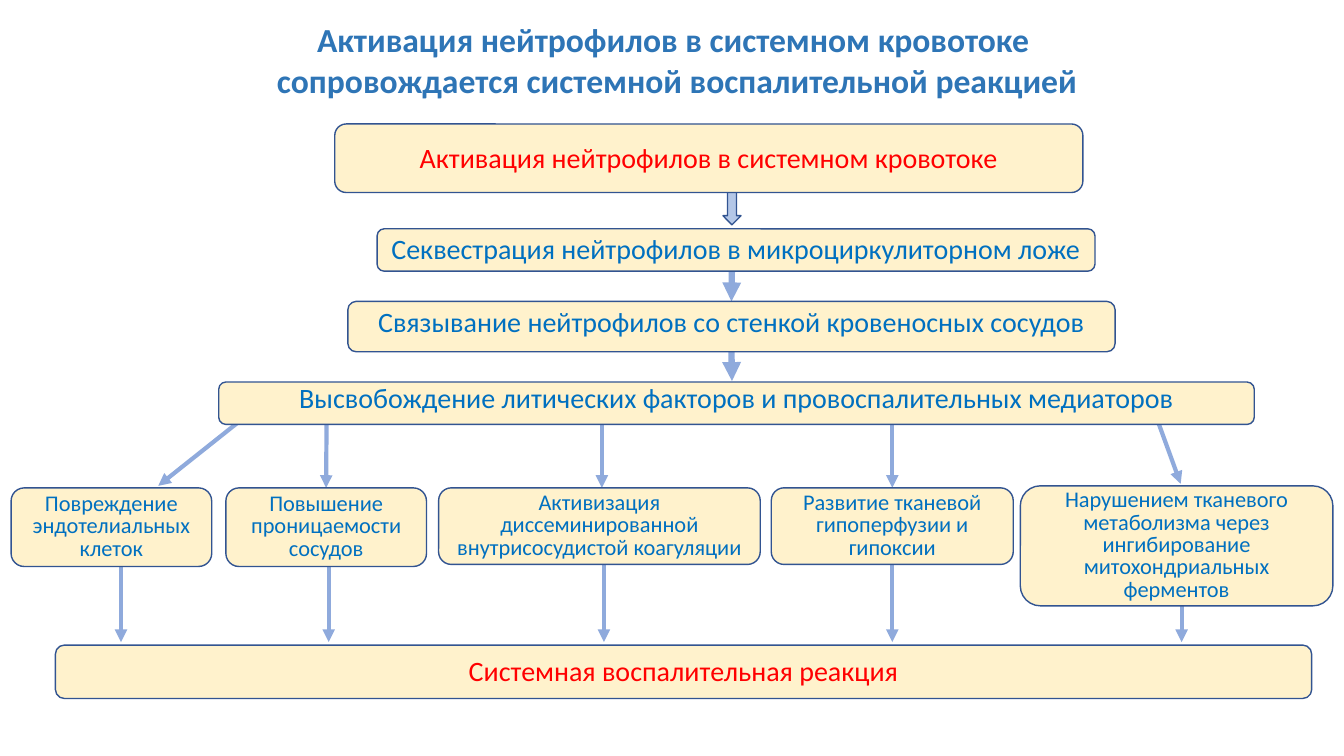
import pptx
import pptx.util
import pptx.dml.color
import pptx.enum.shapes
import pptx.enum.text
import pptx.oxml.ns
import lxml.etree

PX = 9144  # 100 px to the inch
HUES = {
    "title": "2E75B6", "text": "0070C0", "alert": "FF0000",
    "box": "FFF2CC", "edge": "325491", "line": "8FAADC", "block": "B4C7E7",
}
FONT = "Calibri"
KIND = pptx.enum.shapes.MSO_SHAPE


class Board:
    def __init__(self, deck):
        self.slide = deck.slides.add_slide(deck.slide_layouts[6])
        self.shapes = self.slide.shapes

    def hue(self, name):
        return pptx.dml.color.RGBColor.from_string(HUES[name])

    def label(self, frame, text, size, hue, bold=False):
        par = frame.paragraphs[0]
        par.text = text
        par.alignment = pptx.enum.text.PP_ALIGN.CENTER
        par.font.name = FONT
        par.font.size = pptx.util.Pt(size)
        par.font.bold = bold
        par.font.color.rgb = self.hue(hue)
        return par

    def title(self, text, *area):
        frame = self.shapes.add_textbox(*(v * PX for v in area)).text_frame
        frame.word_wrap = False
        frame.auto_size = pptx.enum.text.MSO_AUTO_SIZE.SHAPE_TO_FIT_TEXT
        par = self.label(frame, text, 24, "title", True)
        par.space_before = pptx.util.Pt(6)

    def shape(self, kind, fill, *area):
        item = self.shapes.add_shape(kind, *(v * PX for v in area))
        item.shadow.inherit = False
        item.fill.solid()
        item.fill.fore_color.rgb = self.hue(fill)
        item.line.color.rgb = self.hue("edge")
        item.line.width = pptx.util.Pt(1)
        return item

    def box(self, text, area, size=20, lead=16, hue="text"):
        item = self.shape(KIND.ROUNDED_RECTANGLE, "box", *area)
        frame = item.text_frame
        frame.word_wrap = True
        frame.vertical_anchor = pptx.enum.text.MSO_ANCHOR.MIDDLE
        par = self.label(frame, text, size, hue)
        par.line_spacing = pptx.util.Pt(lead)
        return item

    def arrow(self, x1, y1, x2, y2, width=3):
        line = self.shapes.add_connector(
            pptx.enum.shapes.MSO_CONNECTOR.STRAIGHT,
            *(v * PX for v in (x1, y1, x2, y2)))
        line.line.color.rgb = self.hue("line")
        line.line.width = pptx.util.Pt(width)
        tag = pptx.oxml.ns.qn
        props = line.element.spPr
        lxml.etree.SubElement(
            props.find(tag("a:ln")), tag("a:tailEnd"), type="triangle")
        lxml.etree.SubElement(props, tag("a:effectLst"))
        return line


def main():
    deck = pptx.Presentation()
    deck.slide_width = 1333 * PX
    deck.slide_height = 750 * PX
    board = Board(deck)

    # Arrows lie behind the boxes
    falls = [board.arrow(x, 516, x, 637) for x in (120, 326, 599, 885, 1172)]
    fans = [board.arrow(*ends) for ends in (
        (250, 408, 157, 482), (324, 397, 324, 484), (597, 408, 597, 484),
        (885, 404, 885, 484), (1140, 395, 1171, 480))]
    bind_in = board.arrow(726, 260, 726, 299, 4.5)
    bind_out = board.arrow(726, 349, 726, 378, 4.5)
    board.shape(KIND.DOWN_ARROW, "block", 717, 162, 18, 61)

    board.title("Активация нейтрофилов в системном кровотоке \v"
                "сопровождается системной воспалительной реакцией",
                261, 14, 821, 91)

    # Main chain
    board.box("Активация нейтрофилов в системном кровотоке",
              (332, 123, 742, 68), lead=22, hue="alert")
    board.box("Секвестрация нейтрофилов в микроциркулиторном ложе",
              (374, 227, 712, 42), lead=22)
    bind = board.box("Связывание нейтрофилов со стенкой кровеносных сосудов",
                     (345, 299, 761, 50))
    board.box("Высвобождение литических факторов и провоспалительных медиаторов",
              (217, 379, 1027, 42))
    board.box("Системная воспалительная реакция",
              (55, 640, 1246, 53), lead=22, hue="alert")

    # Effects
    harms = [board.box(text, area, size=16) for text, area in (
        ("Повреждение эндотелиальных клеток", (11, 484, 199, 78)),
        ("Повышение проницаемости сосудов", (224, 484, 199, 78)),
        ("Активизация диссеминированной внутрисосудистой коагуляции",
         (435, 484, 319, 76)),
        ("Развитие тканевой гипоперфузии и гипоксии", (765, 484, 240, 76)),
        ("Нарушением тканевого метаболизма через ингибирование "
         "митохондриальных ферментов", (1012, 482, 310, 119)))]

    # Joints at the middle of a side
    bind_in.end_connect(bind, 0)
    bind_out.begin_connect(bind, 2)
    for i in (1, 3):
        fans[i].end_connect(harms[i], 0)
    falls[3].begin_connect(harms[3], 2)

    deck.save("out.pptx")


if __name__ == "__main__":
    main()
